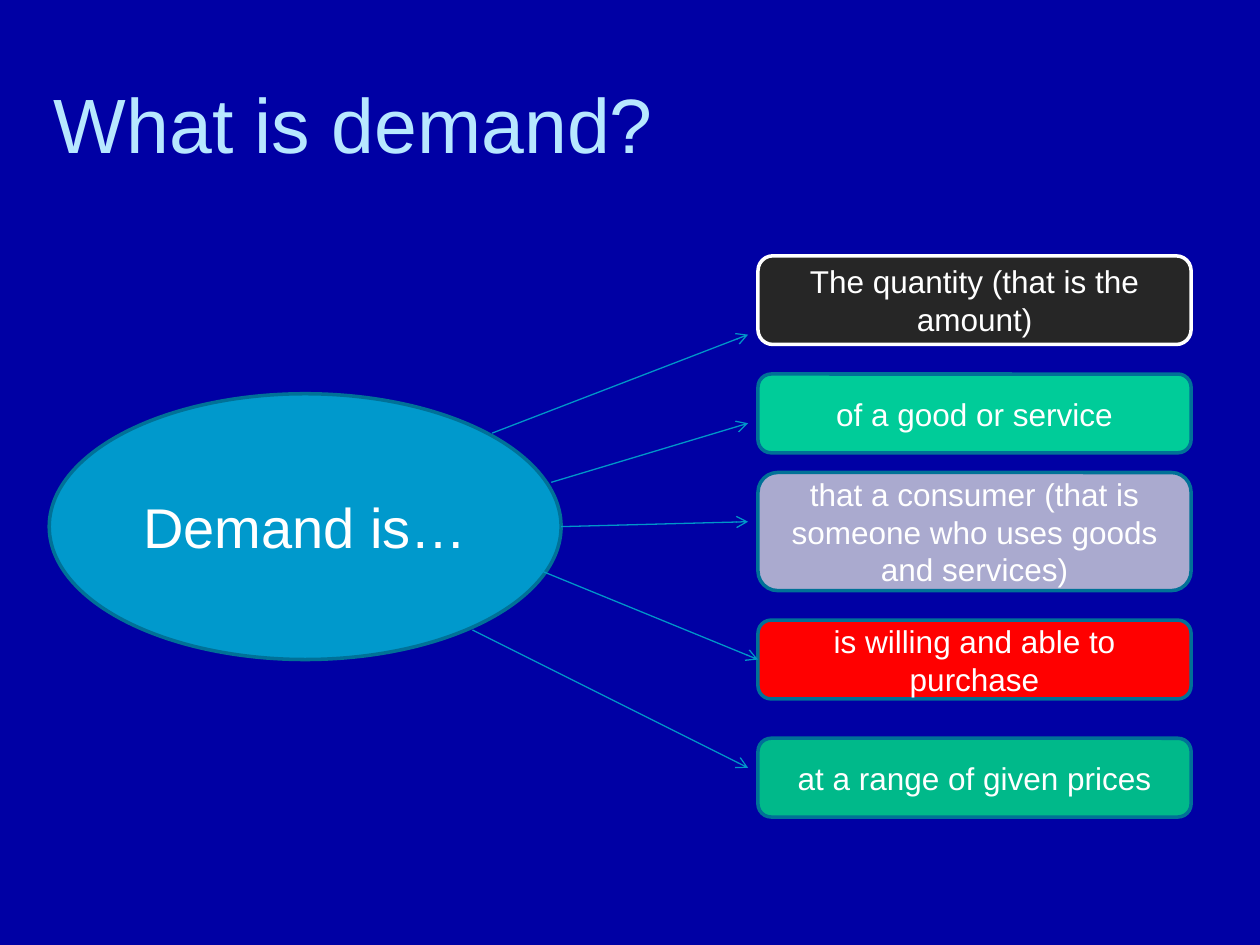
from dataclasses import dataclass

from lxml.etree import SubElement
from pptx import Presentation
from pptx.dml.color import RGBColor
from pptx.enum.shapes import MSO_CONNECTOR, MSO_SHAPE
from pptx.enum.text import MSO_ANCHOR, MSO_AUTO_SIZE, PP_ALIGN
from pptx.oxml.ns import qn
from pptx.util import Inches, Pt


@dataclass(frozen=True)
class Theme:
    font: str = "Arial"
    background: str = "0000A4"
    title: str = "B7E7FF"
    text: str = "FFFFFF"
    hub: str = "0099CC"
    outline: str = "007197"
    arrow: str = "0096C8"
    title_size: int = 44
    hub_size: int = 32
    part_size: int = 18
    outline_width: float = 2
    arrow_width: float = 0.75


THEME = Theme()
WIDTH, HEIGHT = Inches(10), Inches(7.5)
COLUMNS = 128
UNIT = WIDTH / COLUMNS

TITLE = "What is demand?"
TITLE_AREA = (4.2, 3.2, 119.2, 18.6)
HUB = "Demand is…"
HUB_AREA = (5, 40, 52, 27)
PART_LEFT, PART_WIDTH = 77, 44
ARROW_GAP = 1

# text, top row, rows, fill, outline, arrow start, arrow end row (None joins the box)
PARTS = [
    ("The quantity (that is the amount)", 26, 9, "262626", THEME.text, (50, 44), 34),
    ("of a good or service", 38, 8, "00CC99", THEME.outline, (56, 49), 43),
    ("that a consumer (that is someone who uses goods and services)",
     48, 12, "AAAACF", THEME.outline, (57, 53.5), 53),
    ("is willing and able to purchase", 63, 8, "FF0000", THEME.outline, (55, 58), None),
    ("at a range of given prices", 75, 8, "00B98A", THEME.outline, (48, 64), 78),
]


def rgb(color):
    return RGBColor.from_string(color)


def grid(*cells):
    return [round(cell * UNIT) for cell in cells]


def write(holder, text, *, size, color=THEME.text, align=PP_ALIGN.CENTER):
    frame = holder.text_frame
    frame.word_wrap = True
    frame.auto_size = MSO_AUTO_SIZE.NONE
    frame.vertical_anchor = MSO_ANCHOR.MIDDLE
    frame.text = text
    paragraph = frame.paragraphs[0]
    paragraph.alignment = align
    paragraph.font.name = THEME.font
    paragraph.font.size = Pt(size)
    paragraph.font.color.rgb = rgb(color)


def add_bubble(slide, preset, area, text, size, fill, outline):
    bubble = slide.shapes.add_shape(preset, *grid(*area))
    bubble.shadow.inherit = False
    bubble.fill.solid()
    bubble.fill.fore_color.rgb = rgb(fill)
    bubble.line.color.rgb = rgb(outline)
    bubble.line.width = Pt(THEME.outline_width)
    write(bubble, text, size=size)
    return bubble


def add_arrow(slide, start, end):
    arrow = slide.shapes.add_connector(MSO_CONNECTOR.STRAIGHT, *grid(*start, *end))
    arrow.line.color.rgb = rgb(THEME.arrow)
    arrow.line.width = Pt(THEME.arrow_width)
    properties = arrow._element.spPr
    SubElement(properties.find(qn("a:ln")), qn("a:tailEnd"), type="arrow")
    SubElement(properties, qn("a:effectLst"))
    return arrow


def main():
    deck = Presentation()
    deck.slide_width, deck.slide_height = WIDTH, HEIGHT
    slide = deck.slides.add_slide(deck.slide_layouts[5])
    slide.background.fill.solid()
    slide.background.fill.fore_color.rgb = rgb(THEME.background)

    heading = slide.shapes.title
    heading.left, heading.top, heading.width, heading.height = grid(*TITLE_AREA)
    write(heading, TITLE, size=THEME.title_size, color=THEME.title, align=PP_ALIGN.LEFT)

    add_bubble(slide, MSO_SHAPE.OVAL, HUB_AREA, HUB, THEME.hub_size, THEME.hub, THEME.outline)
    for text, top, rows, fill, outline, start, end_row in PARTS:
        part = add_bubble(slide, MSO_SHAPE.ROUNDED_RECTANGLE,
                          (PART_LEFT, top, PART_WIDTH, rows),
                          text, THEME.part_size, fill, outline)
        if end_row is None:
            add_arrow(slide, start, (PART_LEFT, top + rows / 2)).end_connect(part, 1)
        else:
            add_arrow(slide, start, (PART_LEFT - ARROW_GAP, end_row))

    deck.save("out.pptx")


if __name__ == "__main__":
    main()
